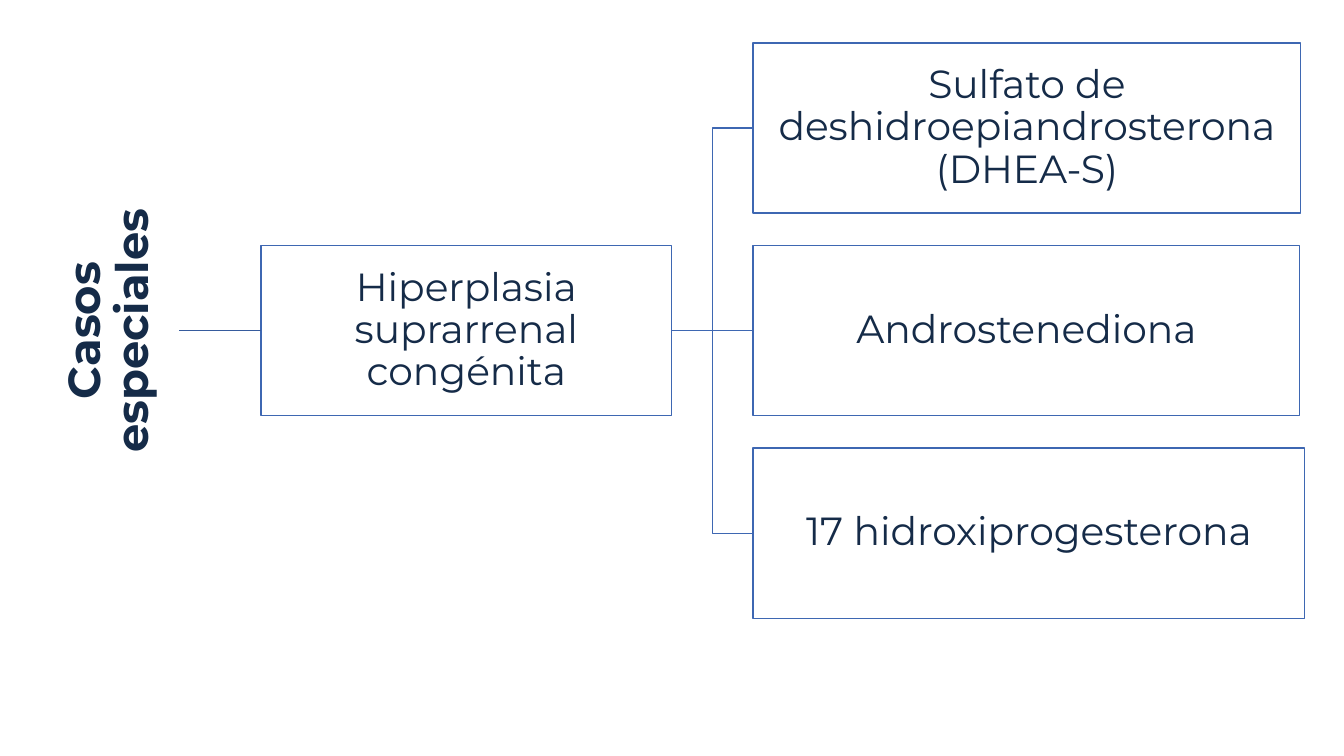
from pptx import Presentation
from pptx.dml.color import RGBColor
from pptx.enum.shapes import MSO_CONNECTOR, MSO_SHAPE
from pptx.enum.text import MSO_ANCHOR, MSO_AUTO_SIZE, PP_ALIGN
from pptx.oxml.ns import qn
from pptx.util import Inches, Pt
from lxml import etree

RECT = MSO_SHAPE.RECTANGLE
STRAIGHT, ELBOW = MSO_CONNECTOR.STRAIGHT, MSO_CONNECTOR.ELBOW
LEFT_SIDE, RIGHT_SIDE = 1, 3

NAVY = RGBColor(0x15, 0x2B, 0x48)
BLUE = RGBColor(0x3E, 0x67, 0xB2)
DARK_BLUE = RGBColor(0x36, 0x5B, 0x9D)
WHITE = RGBColor(0xFF, 0xFF, 0xFF)

# Content
TITLE = "Casos especiales"
CONDITION = "Hiperplasia suprarrenal congénita"
HORMONES = [  # text, box width
    ("Sulfato de deshidroepiandrosterona (DHEA-S)", 5.43),
    ("Androstenediona", 5.42),
    ("17 hidroxiprogesterona", 5.47),
]

# Layout, in inches
CENTER_Y, ROW_STEP, BOX_H = 3.28, 2.01, 1.69
TITLE_CENTER_X, TITLE_W, TITLE_H = 1.09, 2.94, 1.38
TITLE_EDGE = TITLE_CENTER_X + TITLE_H / 2
CONDITION_X, CONDITION_W = 2.59, 4.07
HORMONE_X = 7.47


def set_text(shape, text, size=28, bold=False, color=NAVY, font="Montserrat"):
    tf = shape.text_frame
    tf.word_wrap = True
    tf.auto_size = MSO_AUTO_SIZE.NONE
    tf.vertical_anchor = MSO_ANCHOR.MIDDLE
    tf.margin_left = tf.margin_right = tf.margin_top = tf.margin_bottom = Inches(0.02)
    p = tf.paragraphs[0]
    p.alignment = PP_ALIGN.CENTER
    p.line_spacing = 0.9
    r = p.add_run()
    r.text = text
    r.font.name, r.font.size, r.font.bold = font, Pt(size), bold
    r.font.color.rgb = color


def add_box(s, text, x, center_y, w):
    box = s.shapes.add_shape(RECT, Inches(x), Inches(center_y - BOX_H / 2),
                             Inches(w), Inches(BOX_H))
    box.shadow.inherit = False
    box.fill.solid()
    box.fill.fore_color.rgb = WHITE
    box.line.color.rgb = BLUE
    box.line.width = Pt(1)
    set_text(box, text)
    return box


def add_link(s, kind, x1, y1, x2, y2, color=BLUE):
    link = s.shapes.add_connector(kind, Inches(x1), Inches(y1), Inches(x2), Inches(y2))
    link.line.color.rgb = color
    link.line.width = Pt(1)
    etree.SubElement(link._element.spPr, qn("a:effectLst"))
    return link


prs = Presentation()
prs.slide_width, prs.slide_height = Inches(13.33), Inches(7.5)
s = prs.slides.add_slide(prs.slide_layouts[5])

# Title, turned to read upwards
title = s.shapes.title
title.left, title.top = Inches(TITLE_CENTER_X - TITLE_W / 2), Inches(CENTER_Y - TITLE_H / 2)
title.width, title.height = Inches(TITLE_W), Inches(TITLE_H)
title.rotation = 270
set_text(title, TITLE, size=32, bold=True)

# Condition, linked to the title
condition = add_box(s, CONDITION, CONDITION_X, CENTER_Y, CONDITION_W)
link = add_link(s, STRAIGHT, TITLE_EDGE, CENTER_Y, CONDITION_X, CENTER_Y, DARK_BLUE)
link.end_connect(condition, LEFT_SIDE)

# Hormones, linked to the condition
for i, (text, width) in enumerate(HORMONES):
    y = CENTER_Y + (i - 1) * ROW_STEP
    box = add_box(s, text, HORMONE_X, y, width)
    link = add_link(s, STRAIGHT if y == CENTER_Y else ELBOW,
                    CONDITION_X + CONDITION_W, CENTER_Y, HORMONE_X, y)
    link.begin_connect(condition, RIGHT_SIDE)
    link.end_connect(box, LEFT_SIDE)

prs.save("out.pptx")
